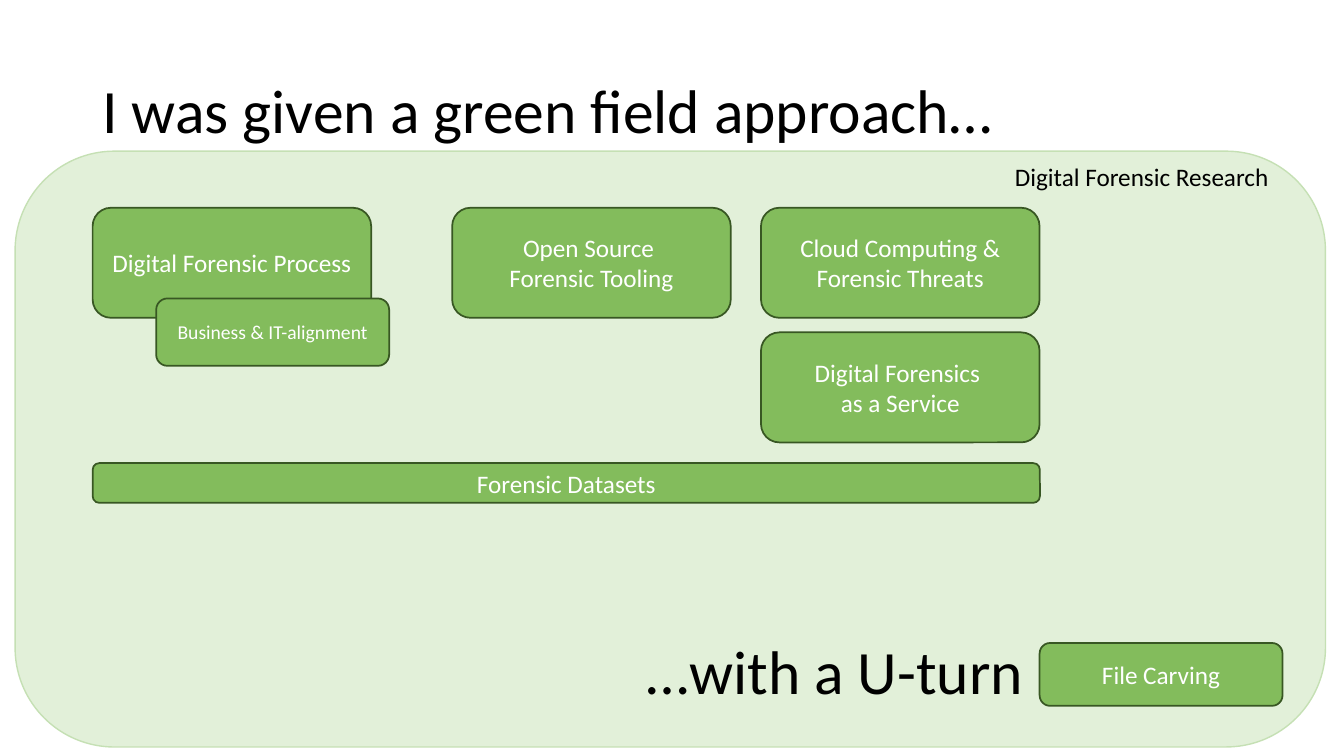
import pptx
import pptx.util
import pptx.dml.color
import pptx.enum.shapes
import pptx.enum.text

Pt = pptx.util.Pt
ALIGN = pptx.enum.text.PP_ALIGN
ANCHOR = pptx.enum.text.MSO_ANCHOR

COLORS = {
    "field": "E2F0D9",
    "field line": "C5E0B4",
    "topic": "83BC5C",
    "topic line": "385723",
    "dark text": "000000",
    "light text": "FFFFFF",
}
FONT = "Calibri"

# Text, column, row
GRID_TOPICS = [
    (["Digital Forensic Process"], 0, 0),
    (["Open Source ", "Forensic Tooling"], 1, 0),
    (["Cloud Computing & Forensic Threats"], 2, 0),
    (["Digital Forensics ", "as a Service"], 2, 1),
]
# Text, (left, top, width, height), font size
OTHER_TOPICS = [
    (["Business & IT-alignment"], (111.6, 213.2, 166.4, 48.1), 14),
    (["Forensic Datasets"], (66.2, 330.8, 676.6, 28.4), 18),
    (["File Carving"], (742.6, 459.3, 173.5, 44.9), 18),
]
HEADLINES = [
    ("I was given a green field approach…", (66.2, 28.8, 828, 104.4)),
    ("…with a U-turn", (455, 429.8, 316.8, 104.4)),
]
FIELD_BOX = (10.8, 108, 936, 425.6)
FIELD_LABEL = ("Digital Forensic Research", (717.8, 111.6, 198, 29))

COLUMN_LEFTS = [66.2, 323, 543.6]
FIRST_ROW_TOP, ROW_STEP = 148.4, 89
TOPIC_WIDTH, TOPIC_HEIGHT = 199, 78.6


def rgb(name):
    return pptx.dml.color.RGBColor.from_string(COLORS[name])


def write_text(shape, lines, size=18, color="dark text", align=ALIGN.LEFT,
               anchor=ANCHOR.MIDDLE, spacing=1.0, wrap=True):
    frame = shape.text_frame
    frame.word_wrap = wrap
    frame.vertical_anchor = anchor
    for index, line in enumerate(lines):
        paragraph = frame.add_paragraph() if index else frame.paragraphs[0]
        paragraph.alignment = align
        paragraph.line_spacing = spacing
        run = paragraph.add_run()
        run.text = line
        run.font.name = FONT
        run.font.size = Pt(size)
        run.font.color.rgb = rgb(color)


def add_rounded_box(slide, box, style, line_width):
    shape = slide.shapes.add_shape(
        pptx.enum.shapes.MSO_SHAPE.ROUNDED_RECTANGLE, *map(Pt, box))
    shape.shadow.inherit = False
    shape.fill.solid()
    shape.fill.fore_color.rgb = rgb(style)
    shape.line.color.rgb = rgb(style + " line")
    shape.line.width = Pt(line_width)
    return shape


def add_topic(slide, lines, box, size=18):
    shape = add_rounded_box(slide, box, "topic", 1.25)
    write_text(shape, lines, size=size, color="light text", align=ALIGN.CENTER)


def main():
    presentation = pptx.Presentation()
    presentation.slide_width = Pt(960)
    presentation.slide_height = Pt(540)
    slide = presentation.slides.add_slide(presentation.slide_layouts[6])

    add_rounded_box(slide, FIELD_BOX, "field", 1)
    for text, box in HEADLINES:
        headline = slide.shapes.add_textbox(*map(Pt, box))
        write_text(headline, [text], size=44, spacing=0.9)

    for lines, column, row in GRID_TOPICS:
        top = FIRST_ROW_TOP + row * ROW_STEP
        add_topic(slide, lines,
                  (COLUMN_LEFTS[column], top, TOPIC_WIDTH, TOPIC_HEIGHT))
    for lines, box, size in OTHER_TOPICS:
        add_topic(slide, lines, box, size)

    text, box = FIELD_LABEL
    label = slide.shapes.add_textbox(*map(Pt, box))
    write_text(label, [text], anchor=ANCHOR.TOP, wrap=False)
    label.text_frame.auto_size = pptx.enum.text.MSO_AUTO_SIZE.SHAPE_TO_FIT_TEXT

    presentation.save("out.pptx")


if __name__ == "__main__":
    main()
